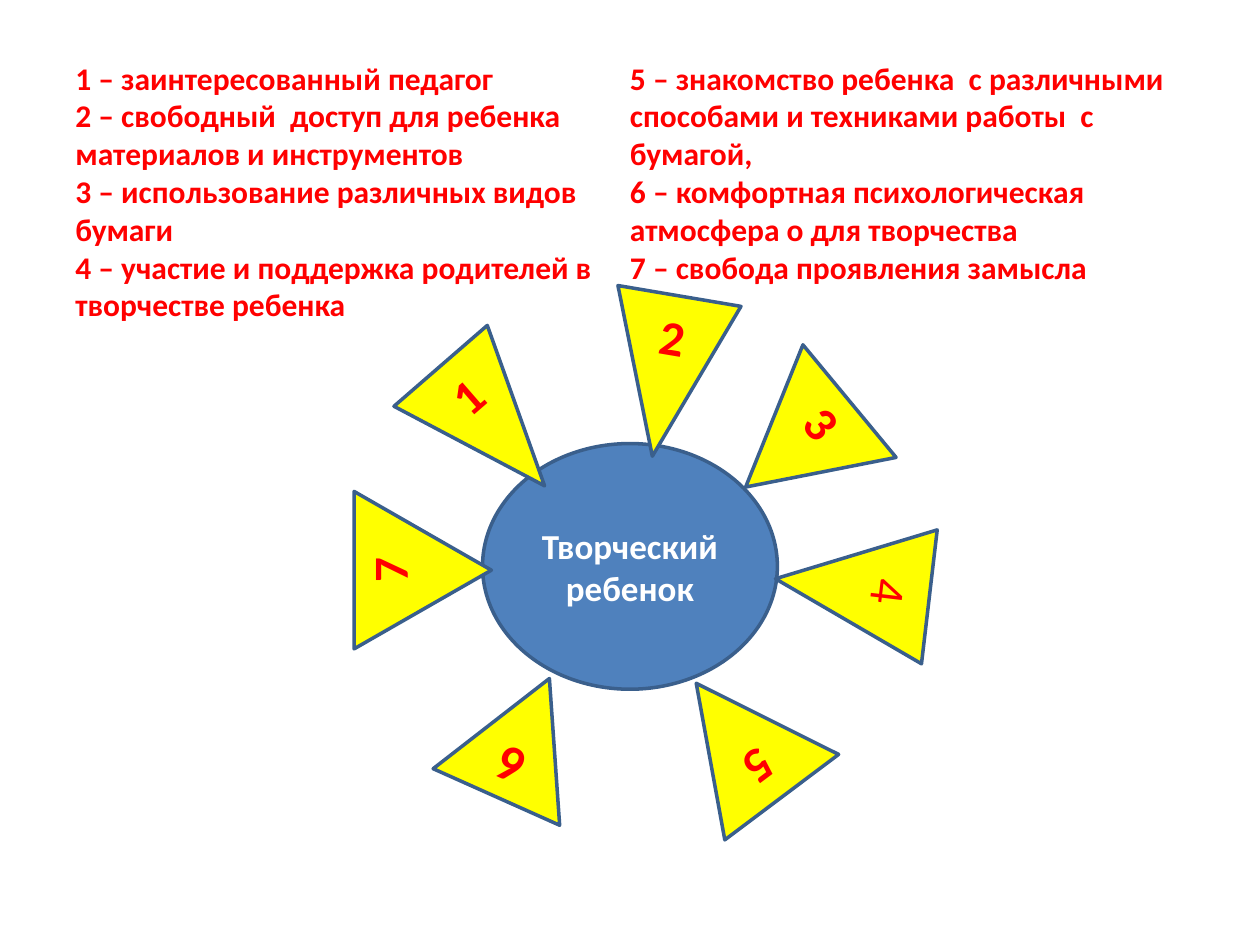
"""Build a slide with seven numbered rays around the creative child."""
import pptx
import pptx.dml.color
import pptx.enum.shapes
import pptx.enum.text
import pptx.util

Inches = pptx.util.Inches
RGBColor = pptx.dml.color.RGBColor
SHAPES = pptx.enum.shapes.MSO_SHAPE
ALIGN = pptx.enum.text.PP_ALIGN
RED = RGBColor(0xFF, 0x00, 0x00)
YELLOW = RGBColor(0xFF, 0xFF, 0x00)
BLUE = RGBColor(0x4F, 0x81, 0xBD)
DARK_BLUE = RGBColor(0x3A, 0x5F, 0x8C)
WHITE = RGBColor(0xFF, 0xFF, 0xFF)

CONDITIONS = [
    "1 – заинтересованный педагог",
    "2 – свободный  доступ для ребенка материалов и инструментов",
    "3 – использование различных видов бумаги",
    "4 – участие и поддержка родителей в творчестве ребенка",
    "5 – знакомство ребенка  с различными способами и техниками работы  с бумагой,",
    "6 – комфортная психологическая атмосфера о для творчества",
    "7 – свобода проявления замысла",
]
RAYS = [
    ("3", 5.75, 2.99, 1.16, 1.07, 50.4),
    ("5", 5.3, 5.31, 1.13, 1.13, 143.1),
    ("4", 6.23, 4.05, 1.07, 1.23, 96.7),
    ("7", 2.73, 3.98, 1.25, 1.09, 270),
    ("1", 3.42, 2.75, 0.98, 1.26, 319.1),
    ("2", 4.79, 2.34, 0.99, 1.29, 9.6),
    ("6", 3.6, 5.34, 1.1, 1.03, 204.1),
]


def write_text(shape, text, alignment, size, color, bold=True):
    frame = shape.text_frame
    frame.word_wrap = True
    frame.vertical_anchor = pptx.enum.text.MSO_ANCHOR.MIDDLE
    paragraph = frame.paragraphs[0]
    paragraph.text = text
    paragraph.alignment = alignment
    font_format = {"name": "Calibri", "size": pptx.util.Pt(size), "bold": bold}
    for run in paragraph.runs:
        for attribute, value in font_format.items():
            setattr(run.font, attribute, value)
        run.font.color.rgb = color


def add_filled_shape(kind, box, fill_color):
    shape = slide.shapes.add_shape(kind, *map(Inches, box))
    shape.shadow.inherit = False
    shape.fill.solid()
    shape.fill.fore_color.rgb = fill_color
    shape.line.color.rgb = DARK_BLUE
    shape.line.width = pptx.util.Pt(2)
    return shape


presentation = pptx.Presentation()
presentation.slide_width = Inches(10)
presentation.slide_height = Inches(7.5)
slide = presentation.slides.add_slide(presentation.slide_layouts[6])

conditions_box = slide.shapes.add_textbox(Inches(0.5), Inches(0.3), Inches(9), Inches(2.43))
write_text(conditions_box, "\v".join(CONDITIONS), ALIGN.LEFT, 18, RED)
conditions_box.text_frame._txBody.bodyPr.set("numCol", "2")

child = add_filled_shape(SHAPES.OVAL, (3.83, 3.52, 2.34, 1.95), BLUE)
write_text(child, "Творческий ребенок", ALIGN.CENTER, 20, WHITE)

for number, left, top, width, height, angle in RAYS:
    ray = add_filled_shape(SHAPES.FLOWCHART_MERGE, (left, top, width, height), YELLOW)
    ray.rotation = angle
    write_text(ray, number, ALIGN.CENTER, 28, RED, bold=number != "4")

presentation.save("out.pptx")
